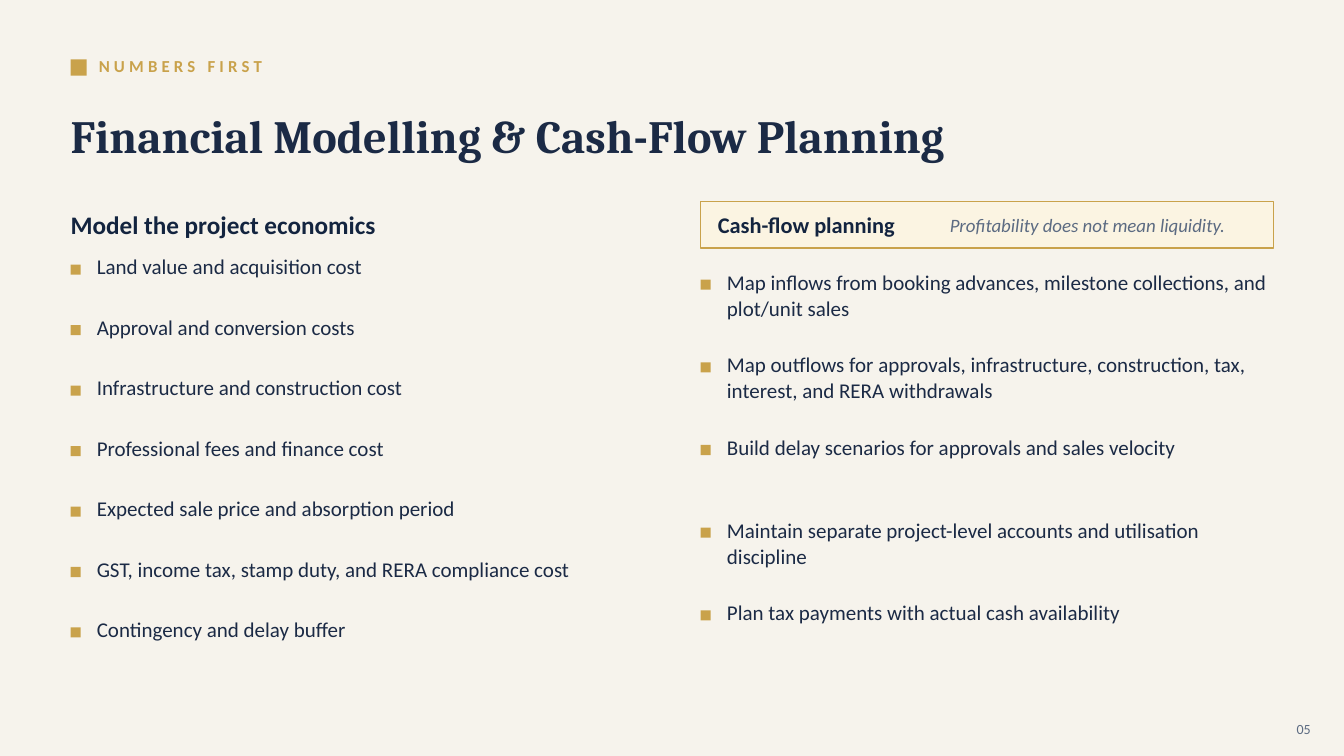
from pptx import Presentation
from pptx.dml.color import RGBColor
from pptx.enum.shapes import MSO_SHAPE as SHAPE
from pptx.enum.text import MSO_ANCHOR as ANCHOR, MSO_AUTO_SIZE as AUTO, PP_ALIGN as ALIGN
from pptx.util import Inches, Pt

COLORS = {
    "paper": "F6F3EC",
    "gold": "C9A24B",
    "cream": "FBF4E2",
    "navy": "1B2A45",
    "deep": "13243F",
    "slate": "5C6B82",
}

ECONOMICS = [
    "Land value and acquisition cost",
    "Approval and conversion costs",
    "Infrastructure and construction cost",
    "Professional fees and finance cost",
    "Expected sale price and absorption period",
    "GST, income tax, stamp duty, and RERA compliance cost",
    "Contingency and delay buffer",
]

CASH_FLOW = [
    "Map inflows from booking advances, milestone collections, and plot/unit sales",
    "Map outflows for approvals, infrastructure, construction, tax, interest, and RERA withdrawals",
    "Build delay scenarios for approvals and sales velocity",
    "Maintain separate project-level accounts and utilisation discipline",
    "Plan tax payments with actual cash availability",
]


def rgb(name):
    return RGBColor.from_string(COLORS[name])


def add_rect(s, x, y, w, h, fill, line=None):
    sp = s.shapes.add_shape(SHAPE.RECTANGLE, Inches(x), Inches(y), Inches(w), Inches(h))
    sp.shadow.inherit = False
    sp.fill.solid()
    sp.fill.fore_color.rgb = rgb(fill)
    if line:
        sp.line.color.rgb = rgb(line)
        sp.line.width = Pt(1)
    else:
        sp.line.fill.background()


def write(sp, text, size, color, font="Calibri", bold=False, italic=False,
          anchor=ANCHOR.MIDDLE, align=ALIGN.LEFT, leading=None, tracking=None):
    tf = sp.text_frame
    tf.word_wrap = True
    tf.auto_size = AUTO.NONE
    tf.vertical_anchor = anchor
    tf.margin_left = tf.margin_top = tf.margin_right = tf.margin_bottom = 0
    p = tf.paragraphs[0]
    p.alignment = align
    if leading:
        p.line_spacing = leading
    r = p.add_run()
    r.text = text
    r.font.name = font
    r.font.size = Pt(size)
    r.font.bold = bold
    r.font.italic = italic
    r.font.color.rgb = rgb(color)
    if tracking:
        r.font._element.set("spc", str(tracking * 100))


def add_text(s, x, y, w, h, text, size, color, **style):
    sp = s.shapes.add_textbox(Inches(x), Inches(y), Inches(w), Inches(h))
    write(sp, text, size, color, **style)


def add_title(s, text):
    sp = s.shapes.title
    sp.left, sp.top = Inches(0.7), Inches(0.88)
    sp.width, sp.height = Inches(11.95), Inches(0.92)
    write(sp, text, 33, "navy", font="Cambria", bold=True)


def add_bullets(s, items, x, y, w, pitch):
    for i, item in enumerate(items):
        top = y + i * pitch
        add_rect(s, x, top + 0.115, 0.1, 0.1, "gold")
        add_text(s, x + 0.26, top, w, pitch, item, 15, "navy",
                 anchor=ANCHOR.TOP, leading=1.04)


def main():
    prs = Presentation()
    prs.slide_width, prs.slide_height = Inches(13.33), Inches(7.5)
    s = prs.slides.add_slide(prs.slide_layouts[5])
    s.background.fill.solid()
    s.background.fill.fore_color.rgb = rgb("paper")

    add_rect(s, 0.7, 0.59, 0.16, 0.16, "gold")
    add_text(s, 0.98, 0.48, 9, 0.34, "NUMBERS FIRST", 12, "gold", bold=True, tracking=3)
    add_title(s, "Financial Modelling & Cash-Flow Planning")

    add_text(s, 0.7, 2, 5.9, 0.46, "Model the project economics", 18, "deep", bold=True)
    add_bullets(s, ECONOMICS, 0.7, 2.51, 5.59, 0.6)

    add_rect(s, 6.95, 2, 5.68, 0.46, "cream", line="gold")
    add_text(s, 7.12, 2, 2.3, 0.46, "Cash-flow planning", 16, "deep", bold=True)
    add_text(s, 9.42, 2, 3.15, 0.46, "Profitability does not mean liquidity.", 13.5, "slate",
             italic=True)
    add_bullets(s, CASH_FLOW, 6.95, 2.66, 5.42, 0.82)

    add_text(s, 12.4, 7.08, 0.6, 0.3, "05", 10, "slate", align=ALIGN.RIGHT)
    prs.save("out.pptx")


if __name__ == "__main__":
    main()
